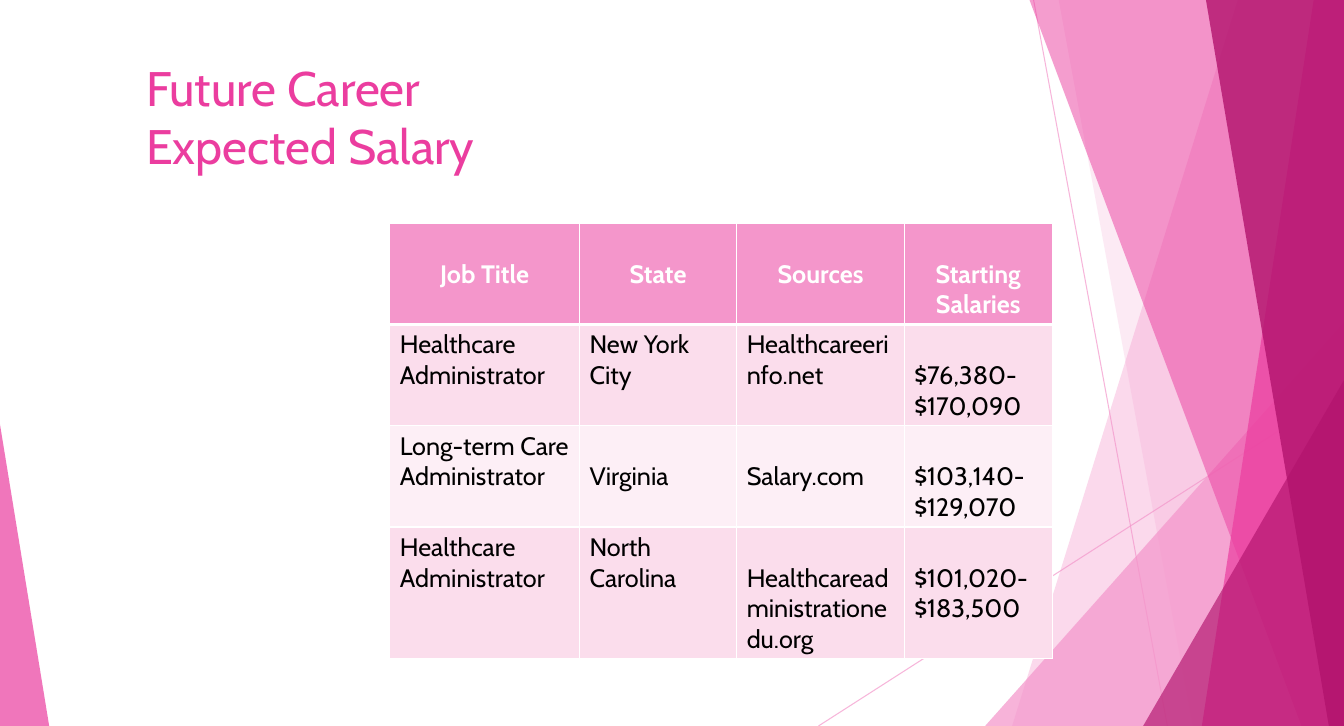
from dataclasses import dataclass

from lxml import etree
from pptx import Presentation
from pptx.dml.color import RGBColor
from pptx.enum.shapes import MSO_CONNECTOR, MSO_SHAPE
from pptx.enum.text import MSO_ANCHOR, PP_ALIGN
from pptx.oxml.ns import qn
from pptx.util import Cm, Pt

STRAIGHT = MSO_CONNECTOR.STRAIGHT
TRIANGLE = MSO_SHAPE.ISOSCELES_TRIANGLE
MIDDLE = MSO_ANCHOR.MIDDLE
CENTER, LEFT = PP_ALIGN.CENTER, PP_ALIGN.LEFT

WHITE = RGBColor(0xFF, 0xFF, 0xFF)
BLACK = RGBColor(0x00, 0x00, 0x00)
LIGHT_PINK = RGBColor(0xF4, 0x96, 0xCB)
PINK = RGBColor(0xEB, 0x3D, 0x9F)
MAGENTA = RGBColor(0xB2, 0x13, 0x6D)
BANDS = (RGBColor(0xFB, 0xDD, 0xEC), RGBColor(0xFD, 0xEF, 0xF6))

FONT = "Cabin"
WIDTH, HEIGHT = 33.86, 18.29
BAND_TOP = -0.02
MARGIN_TOP, TEXT_LINE = 0.13, 0.77


@dataclass(frozen=True)
class Band:
    """Strip that reaches the right edge, with a slanted left side."""
    top_x: float
    bottom_x: float
    color: RGBColor
    opacity: int


@dataclass(frozen=True)
class Corner:
    """Right triangle that stands on the bottom edge."""
    left: float
    top: float
    width: float
    peak: float
    color: RGBColor
    opacity: int


@dataclass(frozen=True)
class Entry:
    """Table text, lowered by one line where wanted."""
    text: str
    lowered: bool = False


RAYS = [(26.04, 0, 29.41, HEIGHT), (WIDTH, 9.8, 20.62, HEIGHT)]
FACETS = [
    Band(31.19, 25.5, LIGHT_PINK, 36),
    Band(26.67, 30.05, LIGHT_PINK, 20),
    Corner(24.82, 8.13, 9.04, 1, LIGHT_PINK, 72),
    Band(25.93, 32.79, PINK, 50),
    Band(33.1, 30.28, PINK, 70),
    Band(30.38, 33.48, MAGENTA, 80),
    Corner(28.8, 9.58, 5.06, 1, MAGENTA, 66),
    Corner(0, 10.69, 1.24, 0, PINK, 70),
]
COLUMN_WIDTHS = [4.78, 3.96, 4.22, 3.73]
ROW_HEIGHT = 2.39
ENTRIES = [
    [Entry("Job Title", True), Entry("State", True),
     Entry("Sources", True), Entry("Starting Salaries", True)],
    [Entry("Healthcare Administrator"), Entry("New York City"),
     Entry("Healthcareerinfo.net"), Entry("$76,380-$170,090", True)],
    [Entry("Long-term Care Administrator"), Entry("Virginia", True),
     Entry("Salary.com", True), Entry("$103,140-$129,070", True)],
    [Entry("Healthcare Administrator"), Entry("North Carolina"),
     Entry("Healthcareadministrationedu.org", True), Entry("$101,020-$183,500", True)],
]


def set_opacity(properties, percent: int) -> None:
    color = next(properties.iter(qn("a:srgbClr")))
    etree.SubElement(color, qn("a:alpha"), val=str(percent * 1000))


def draw_ray(page, ends: tuple) -> None:
    ray = page.shapes.add_connector(STRAIGHT, *[Cm(end) for end in ends])
    ray.line.color.rgb = LIGHT_PINK
    ray.line.width = Pt(0.75)
    properties = ray._element.spPr
    set_opacity(properties, 70)
    etree.SubElement(properties, qn("a:effectLst"))


def draw_facet(page, facet: Band | Corner) -> None:
    if isinstance(facet, Band):
        outline = page.shapes.build_freeform(Cm(facet.top_x), Cm(BAND_TOP))
        outline.add_line_segments([
            (Cm(WIDTH), Cm(BAND_TOP)), (Cm(WIDTH), Cm(HEIGHT)),
            (Cm(facet.bottom_x), Cm(HEIGHT))])
        shape = outline.convert_to_shape()
    else:
        shape = page.shapes.add_shape(
            TRIANGLE, Cm(facet.left), Cm(facet.top),
            Cm(facet.width), Cm(HEIGHT - facet.top))
        shape.adjustments[0] = facet.peak
    shape.shadow.inherit = False
    shape.fill.solid()
    shape.fill.fore_color.rgb = facet.color
    set_opacity(shape._element.spPr, facet.opacity)
    shape.line.fill.background()


def style_paragraph(para, size: float, color: RGBColor, bold: bool = False) -> None:
    for span in para.runs:
        span.font.name = FONT
        span.font.size = Pt(size)
        span.font.bold = bold
        span.font.color.rgb = color


def draw_title(page) -> None:
    box = page.shapes.add_textbox(Cm(3.43), Cm(0.74), Cm(11.71), Cm(4.39))
    frame = box.text_frame
    frame.word_wrap = True
    frame.vertical_anchor = MIDDLE
    frame.text = "Future Career Expected Salary"
    style_paragraph(frame.paragraphs[0], 34.6, PINK)


def set_borders(cell, row: int) -> None:
    widths = {"L": 1, "R": 1, "T": 3 if row == 1 else 1, "B": 3 if row == 0 else 1}
    properties = cell._tc.get_or_add_tcPr()
    for side, width in widths.items():
        border = etree.SubElement(properties, qn(f"a:ln{side}"), w=str(Pt(width)))
        fill = etree.SubElement(border, qn("a:solidFill"))
        etree.SubElement(fill, qn("a:srgbClr"), val=str(WHITE))


def fill_cell(cell, entry: Entry, row: int) -> None:
    header = row == 0
    set_borders(cell, row)
    cell.fill.solid()
    cell.fill.fore_color.rgb = LIGHT_PINK if header else BANDS[(row - 1) % 2]
    cell.margin_top = Cm(MARGIN_TOP + TEXT_LINE * entry.lowered)
    cell.text_frame.text = entry.text
    para = cell.text_frame.paragraphs[0]
    para.alignment = CENTER if header else LEFT
    style_paragraph(para, 18, WHITE if header else BLACK, header)


def draw_salary_table(page) -> None:
    table = page.shapes.add_table(
        len(ENTRIES), len(COLUMN_WIDTHS), Cm(9.82), Cm(5.62),
        Cm(sum(COLUMN_WIDTHS)), Cm(ROW_HEIGHT * len(ENTRIES))).table
    for column, width in zip(table.columns, COLUMN_WIDTHS):
        column.width = Cm(width)
    for row, entries in enumerate(ENTRIES):
        for column, entry in enumerate(entries):
            fill_cell(table.cell(row, column), entry, row)


def main() -> None:
    deck = Presentation()
    deck.slide_width, deck.slide_height = Cm(WIDTH), Cm(HEIGHT)
    page = deck.slides.add_slide(deck.slide_layouts[6])

    # Background rays and facets, back to front
    for ends in RAYS:
        draw_ray(page, ends)
    for facet in FACETS:
        draw_facet(page, facet)

    # Content
    draw_title(page)
    draw_salary_table(page)

    deck.save("out.pptx")


if __name__ == "__main__":
    main()
